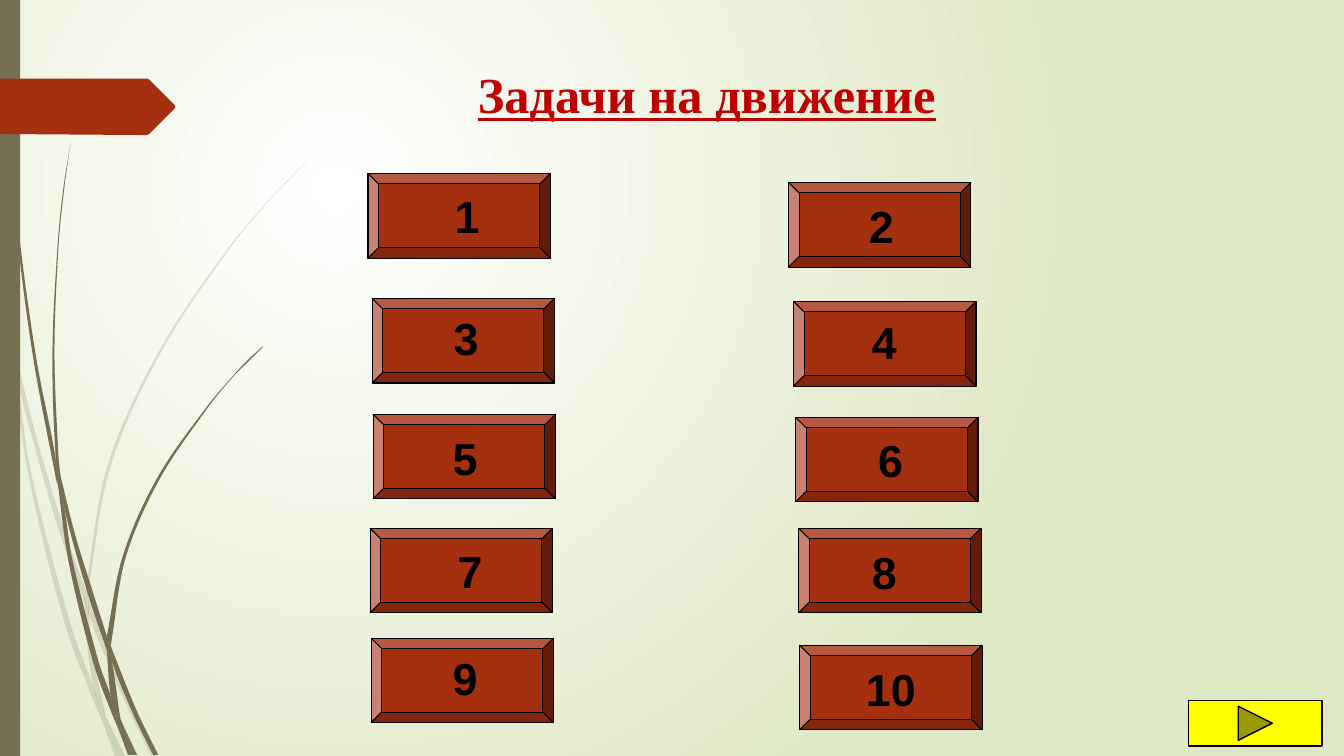
from dataclasses import dataclass
from math import dist

from lxml import etree
from pptx import Presentation
from pptx import slide as sl
from pptx import util as u
from pptx.dml import color as dml
from pptx.enum import shapes, text
from pptx.oxml import ns
from pptx.shapes import autoshape, base

PX = 9144  # EMU per px, 100 px to the inch
COLORS = {
    "white": "FFFFFF", "pale": "DFE8C4", "stem": "766F54", "brick": "A53010",
    "title": "C00000", "yellow": "FFFF00", "black": "000000",
}
Point = tuple[float, float]


@dataclass(frozen=True)
class Blade:
    """A piece of grass between two smooth edges, both from top to bottom."""
    left: list[Point]
    right: list[Point]


@dataclass(frozen=True)
class TaskButton:
    left: int
    top: int
    label: str
    label_left: int
    label_top: int


FAINT_BLADES = [
    Blade([(0, 282), (8, 322), (11, 350)], [(0, 299), (10, 344), (11, 350)]),
    Blade([(14, 345), (17, 376), (36, 449), (57, 522), (84, 599)],
          [(14, 345), (36, 433), (62, 520), (85, 586)]),
    Blade([(88, 596), (88, 610), (123, 694), (150, 750)],
          [(88, 596), (92, 607), (127, 692), (155, 750)]),
    Blade([(105, 711), (119, 750)], [(105, 711), (124, 750)]),
    Blade([(11, 350), (28, 470), (65, 621), (92, 693), (101, 714)],
          [(11, 350), (17, 376), (31, 469), (70, 619), (93, 683), (99, 707), (101, 714)]),
    Blade([(84, 599), (87, 646), (93, 683), (96, 692), (105, 711)],
          [(84, 599), (88, 608), (91, 646), (104, 706), (105, 711)]),
    Blade([(312, 153), (289, 175), (268, 197), (228, 244), (158, 348), (107, 461),
           (85, 584), (85, 586)],
          [(312, 153), (290, 175), (268, 198), (229, 245), (160, 349), (110, 462),
           (88, 584), (88, 596)]),
    Blade([(101, 714), (114, 750)], [(101, 714), (119, 750)]),
    Blade([(85, 586), (84, 599), (88, 608)], [(85, 586), (88, 596), (88, 610)]),
    Blade([(93, 683), (99, 707), (101, 714), (119, 750)],
          [(93, 683), (96, 692), (105, 711), (119, 750)]),
]
SOLID_BLADES = [
    Blade([(3, 0), (3, 48), (7, 110), (17, 233), (33, 355), (56, 477), (57, 481)],
          [(3, 0), (5, 48), (8, 109), (19, 232), (36, 355), (55, 453), (57, 481)]),
    Blade([(60, 472), (64, 505), (88, 592), (106, 645)],
          [(60, 472), (75, 532), (93, 590), (106, 631)]),
    Blade([(110, 641), (111, 656), (132, 708), (152, 749)],
          [(110, 641), (113, 649), (136, 706), (157, 749)]),
    Blade([(57, 477), (68, 557), (93, 659), (111, 708), (117, 722)],
          [(57, 477), (64, 505), (72, 556), (98, 657), (110, 691), (116, 717), (117, 722)]),
    Blade([(70, 141), (62, 193), (57, 245), (52, 349), (55, 449), (60, 472)],
          [(70, 141), (63, 193), (58, 245), (54, 349), (58, 453), (60, 472)]),
    Blade([(122, 719), (133, 749)], [(122, 719), (136, 749)]),
    Blade([(55, 449), (57, 478), (64, 505)], [(55, 449), (60, 472), (64, 505)]),
    Blade([(260, 344), (245, 358), (231, 373), (204, 405), (156, 474), (122, 551),
           (106, 631)],
          [(261, 344), (246, 359), (231, 374), (205, 406), (158, 476), (125, 552),
           (111, 633), (110, 641)]),
    Blade([(117, 722), (127, 749)], [(117, 722), (131, 749)]),
    Blade([(106, 645), (110, 692), (116, 706), (122, 719)],
          [(106, 645), (111, 656), (120, 716), (122, 719)]),
    Blade([(106, 631), (106, 645), (111, 656)], [(106, 631), (110, 641), (111, 656)]),
    Blade([(110, 691), (116, 717), (117, 722), (131, 749)],
          [(110, 691), (116, 706), (122, 719), (133, 749)]),
]
FLAG = [(0, 78), (146, 78), (148, 79), (173, 104), (174, 106), (173, 108), (148, 133),
        (146, 134), (136, 134), (0, 133)]
BUTTONS = [
    TaskButton(365, 172, "1", 441, 182), TaskButton(782, 181, "2", 852, 192),
    TaskButton(369, 296, "3", 440, 303), TaskButton(787, 299, "4", 855, 307),
    TaskButton(370, 411, "5", 439, 422), TaskButton(789, 414, "6", 861, 424),
    TaskButton(367, 524, "7", 444, 534), TaskButton(792, 524, "8", 855, 535),
    TaskButton(368, 633, "9", 439, 641), TaskButton(793, 640, "10", 849, 652),
]


def rgb(name: str) -> dml.RGBColor:
    return dml.RGBColor.from_string(COLORS[name])


def box(left: int, top: int, width: int, height: int) -> list[int]:
    return [value * PX for value in (left, top, width, height)]


def style(shape: base.BaseShape, fill: str, line_width: float = 0) -> None:
    shape.shadow.inherit = False
    shape.fill.solid()
    shape.fill.fore_color.rgb = rgb(fill)
    if line_width:
        shape.line.color.rgb = rgb("black")
        shape.line.width = u.Pt(line_width)
    else:
        shape.line.fill.background()


def handle(before: Point, at: Point, after: Point, length: float) -> Point:
    """Bezier control point that leaves `at` along the smooth tangent."""
    ratio = length / (3 * (dist(before, at) + dist(at, after)))
    return tuple(m + (n - p) * ratio for p, m, n in zip(before, at, after))


def curve(points: list[Point]) -> list[Point]:
    """Two control points and an end point for each stretch of an edge."""
    padded = [points[0], *points, points[-1]]
    result = []
    for a, b, c, d in zip(padded, padded[1:], padded[2:], padded[3:]):
        length = dist(b, c)
        result += [handle(a, b, c, length), handle(d, c, b, length), c]
    return result


def add_outline(slide: sl.Slide, points: list[Point], fill: str) -> autoshape.Shape:
    scaled = [(x * PX, y * PX) for x, y in points]
    builder = slide.shapes.build_freeform(*scaled[0], scale=1.0)
    builder.add_line_segments(scaled[1:], close=True)
    shape = builder.convert_to_shape()
    style(shape, fill)
    return shape


def add_blade(slide: sl.Slide, blade: Blade, opacity: int) -> None:
    foot = blade.right[-1]
    points = [blade.left[0], *curve(blade.left), blade.left[-1], foot, foot,
              *curve(blade.right[::-1])]
    properties = add_outline(slide, points, "stem").element.spPr
    lines = list(properties.iter(ns.qn("a:lnTo")))
    for first, second, third in zip(lines[::3], lines[1::3], lines[2::3]):
        bezier = etree.Element(ns.qn("a:cubicBezTo"))
        first.addprevious(bezier)
        for line in (first, second, third):
            bezier.append(line[0])
            line.getparent().remove(line)
    if opacity < 100:
        solid_color = properties.find(ns.qn("a:solidFill"))[0]
        etree.SubElement(solid_color, ns.qn("a:alpha"), val=str(opacity * 1000))


def paint_background(slide: sl.Slide) -> None:
    fill = slide.background.fill
    fill.gradient()
    for stop, name in zip(fill.gradient_stops, ("white", "pale")):
        stop.color.rgb = rgb(name)
    gradient = slide.element.find(".//" + ns.qn("a:gradFill"))
    gradient.remove(gradient.find(ns.qn("a:lin")))
    circle = etree.SubElement(gradient, ns.qn("a:path"), {"path": "circle"})
    etree.SubElement(circle, ns.qn("a:fillToRect"),
                     l="50000", t="50000", r="100000", b="100000")


def add_title(slide: sl.Slide, wording: str) -> None:
    title = slide.shapes.title
    title.left, title.top, title.width, title.height = box(464, 58, 860, 140)
    frame = title.text_frame
    frame.text = wording
    frame.auto_size = text.MSO_AUTO_SIZE.NONE
    frame.vertical_anchor = text.MSO_ANCHOR.TOP
    paragraph = frame.paragraphs[0]
    paragraph.alignment = text.PP_ALIGN.LEFT
    font = paragraph.font
    font.name, font.size = "Times New Roman", u.Pt(36)
    font.bold = font.underline = True
    font.color.rgb = rgb("title")


def add_task_button(slide: sl.Slide, button: TaskButton) -> None:
    bevel = slide.shapes.add_shape(shapes.MSO_SHAPE.BEVEL,
                                   *box(button.left, button.top, 181, 84))
    style(bevel, "brick", 0.75)
    label = slide.shapes.add_textbox(
        *box(button.label_left, button.label_top, 20 + 25 * len(button.label), 63))
    frame = label.text_frame
    frame.text = button.label
    frame.word_wrap = False
    frame.auto_size = text.MSO_AUTO_SIZE.SHAPE_TO_FIT_TEXT
    font = frame.paragraphs[0].font
    font.name, font.size, font.bold = "Arial", u.Pt(32), True
    font.color.rgb = rgb("black")


def main() -> None:
    presentation = Presentation()
    presentation.slide_width, presentation.slide_height = 1333 * PX, 750 * PX
    slide = presentation.slides.add_slide(presentation.slide_layouts[5])
    # Backdrop: gradient, grass, side bar and flag
    paint_background(slide)
    for blades, opacity in ((FAINT_BLADES, 20), (SOLID_BLADES, 100)):
        for blade in blades:
            add_blade(slide, blade, opacity)
    side_bar = slide.shapes.add_shape(shapes.MSO_SHAPE.RECTANGLE, *box(0, 0, 20, 750))
    style(side_bar, "stem")
    add_outline(slide, FLAG, "brick")
    # Title, numbered tasks and forward button
    add_title(slide, "Задачи на движение")
    for button in BUTTONS:
        add_task_button(slide, button)
    forward = slide.shapes.add_shape(shapes.MSO_SHAPE.ACTION_BUTTON_FORWARD_OR_NEXT,
                                     *box(1179, 695, 132, 45))
    style(forward, "yellow", 1)
    presentation.save("out.pptx")


if __name__ == "__main__":
    main()
